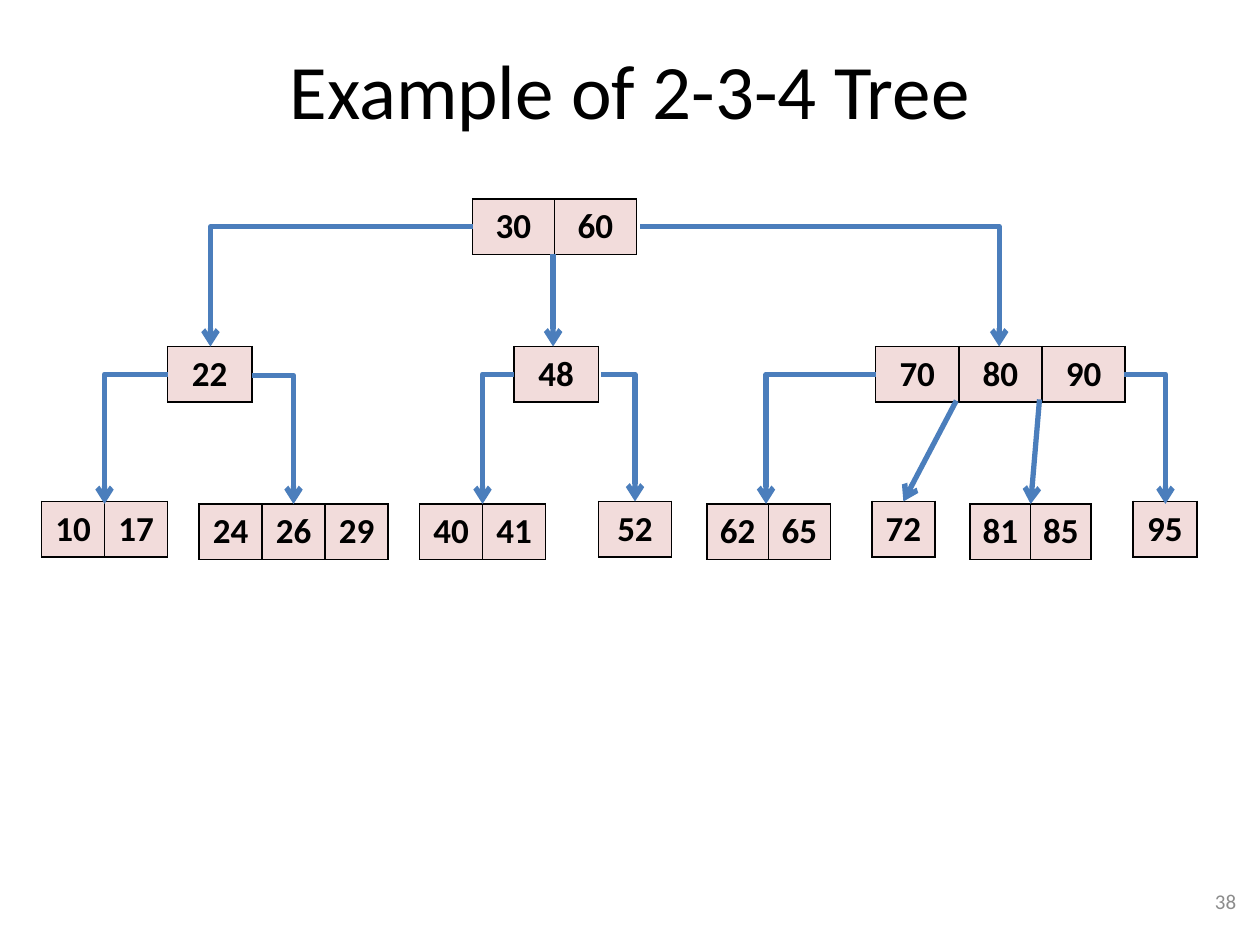
from lxml import etree
from pptx import Presentation
from pptx.dml.color import RGBColor
from pptx.enum import shapes, text
from pptx.oxml import ns
from pptx.util import Inches, Pt


def color(hex_value):
    return RGBColor.from_string(hex_value)


def format_text(frame, size, hex_value, align, bold=False):
    frame.vertical_anchor = text.MSO_ANCHOR.MIDDLE
    paragraph = frame.paragraphs[0]
    paragraph.alignment = align
    for span in paragraph.runs:
        span.font.name = "Calibri"
        span.font.size = Pt(size)
        span.font.bold = bold
        span.font.color.rgb = color(hex_value)


deck = Presentation()
deck.slide_width, deck.slide_height = Inches(10), Inches(7.5)
page = deck.slides.add_slide(deck.slide_layouts[5])

# Title
title = page.shapes.title
title.left, title.top = Inches(0.5), Inches(0.08)
title.width, title.height = Inches(9), Inches(1.25)
title.text_frame.text = "Example of 2-3-4 Tree"
format_text(title.text_frame, 44, "000000", text.PP_ALIGN.CENTER)

# Page number
number = page.shapes.add_textbox(Inches(7.58), Inches(6.95), Inches(2.33), Inches(0.4))
number.text_frame.word_wrap = True
number.text_frame.text = "38"
format_text(number.text_frame, 12, "8C8C8C", text.PP_ALIGN.RIGHT)

# Tree nodes: left, top, key width, keys
nodes = [
    (3.75, 1.58, 0.65, "30 60"),
    (1.33, 2.75, 0.67, "22"),
    (4.08, 2.75, 0.67, "48"),
    (6.95, 2.75, 0.66, "70 80 90"),
    (0.33, 3.98, 0.5, "10 17"),
    (1.58, 4, 0.5, "24 26 29"),
    (3.33, 4, 0.5, "40 41"),
    (4.75, 3.98, 0.58, "52"),
    (5.61, 4, 0.49, "62 65"),
    (6.92, 3.98, 0.5, "72"),
    (7.7, 4, 0.48, "81 85"),
    (8.99, 3.98, 0.51, "95"),
]
for left, top, key_width, key_list in nodes:
    keys = key_list.split()
    table = page.shapes.add_table(
        1, len(keys), Inches(left), Inches(top),
        Inches(key_width * len(keys)), Inches(0.44)).table
    for cell, key in zip(table.iter_cells(), keys):
        cell.text_frame.text = key
        format_text(cell.text_frame, 20, "000000", text.PP_ALIGN.CENTER, bold=True)
        cell.vertical_anchor = text.MSO_ANCHOR.TOP
        # Narrow side margins keep each key on one line
        cell.margin_left = cell.margin_right = Inches(0.04)
        # Borders come before the fill in the cell properties
        properties = cell._tc.get_or_add_tcPr()
        for side in ("lnL", "lnR", "lnT", "lnB"):
            border = etree.SubElement(properties, ns.qn(f"a:{side}"), w=str(Pt(1)))
            fill = etree.SubElement(border, ns.qn("a:solidFill"))
            etree.SubElement(fill, ns.qn("a:srgbClr"), val="000000")
        cell.fill.solid()
        cell.fill.fore_color.rgb = color("F2DCDB")

# Arrows from parent to child: kind, start x, start y, end x, end y
ELBOW, STRAIGHT = shapes.MSO_CONNECTOR.ELBOW, shapes.MSO_CONNECTOR.STRAIGHT
arrows = [
    (ELBOW, 3.75, 1.8, 1.67, 2.75),
    (ELBOW, 5.08, 1.8, 7.93, 2.75),
    (STRAIGHT, 4.39, 2.02, 4.39, 2.75),
    (ELBOW, 1.33, 2.97, 0.83, 4),
    (ELBOW, 2, 2.98, 2.33, 4),
    (ELBOW, 4.08, 2.97, 3.83, 4),
    (ELBOW, 4.77, 2.97, 5.04, 3.98),
    (ELBOW, 6.95, 2.97, 6.08, 4),
    (ELBOW, 8.92, 2.97, 9.25, 4),
    (STRAIGHT, 7.59, 3.18, 7.17, 3.98),
    (STRAIGHT, 8.25, 3.17, 8.18, 4),
]
for kind, *ends in arrows:
    arrow = page.shapes.add_connector(kind, *map(Inches, ends))
    arrow.line.color.rgb = color("4B7EBC")
    arrow.line.width = Pt(3)
    properties = arrow._element.spPr
    etree.SubElement(arrow.line._get_or_add_ln(), ns.qn("a:tailEnd"), type="arrow")
    etree.SubElement(properties, ns.qn("a:effectLst"))
    if kind == ELBOW:
        # One bend: sideways first, then down
        properties.find(ns.qn("a:prstGeom")).set("prst", "bentConnector2")
        if ends[2] < ends[0]:
            frame = properties.find(ns.qn("a:xfrm"))
            frame.attrib.pop("flipH")
            frame.set("rot", "10800000")
            frame.set("flipV", "1")

deck.save("out.pptx")
